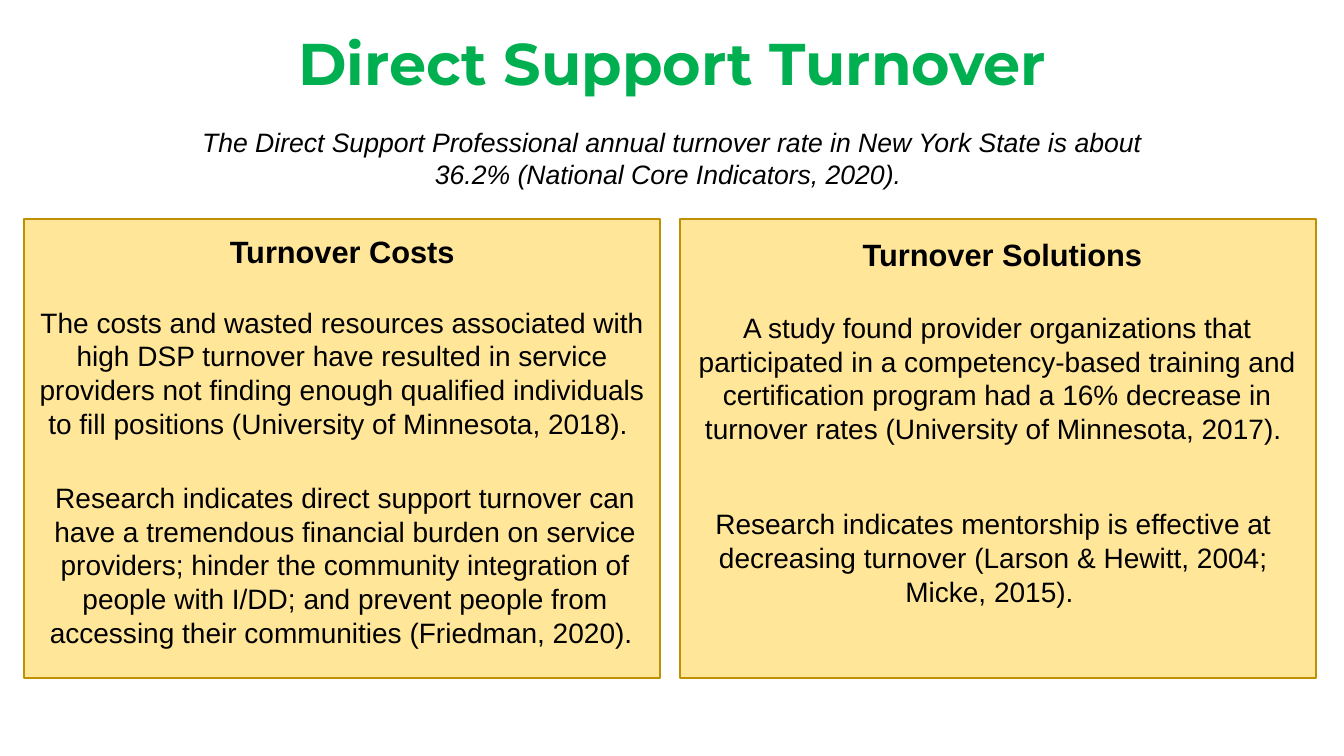
from pptx import Presentation
from pptx.dml.color import RGBColor
from pptx.enum.shapes import MSO_SHAPE as Shape
from pptx.enum.text import MSO_ANCHOR as Anchor, PP_ALIGN as Align
from pptx.util import Pt

COLORS = {"title": "00B050", "text": "000000", "panel": "FFE699", "border": "BF9000"}

# Every box is (left, top, width, height) in points.
TITLE = ("Direct Support Turnover", (66.24, 20.88, 828, 65.52))
SUBTITLE = (
    "The Direct Support Professional annual turnover rate in New York State is about "
    "36.2% (National Core Indicators, 2020). ",
    (135.36, 86.4, 689.04, 134.64),
)
PANELS = [(17.28, 156.24, 454.32, 328.32), (486, 156.24, 454.32, 328.32)]
HEADINGS = [
    ("Turnover Costs", (56.88, 162.72, 375.12, 33.84)),
    ("Turnover Solutions", (528.48, 164.88, 375.12, 33.84)),
]
FINDINGS = [
    ("The costs and wasted resources associated with high DSP turnover have resulted "
     "in service providers not finding enough qualified individuals to fill positions "
     "(University of Minnesota, 2018). ",
     (13.68, 214.56, 461.52, 104.4)),
    ("Research indicates direct support turnover can have a tremendous financial burden "
     "on service providers; hinder the community integration of people with I/DD; and "
     "prevent people from accessing their communities (Friedman, 2020). ",
     (15.84, 339.84, 461.52, 128.16)),
    ("A study found provider organizations that participated in a competency-based "
     "training and certification program had a 16% decrease in turnover rates "
     "(University of Minnesota, 2017). ",
     (472.32, 218.16, 480.24, 104.4)),
    ("Research indicates mentorship is effective at decreasing turnover "
     "(Larson & Hewitt, 2004; Micke, 2015). ",
     (478.8, 358.56, 461.52, 79.92)),
]


def color(name):
    return RGBColor.from_string(COLORS[name])


def in_points(box):
    return [Pt(length) for length in box]


def add_panel(slide, box):
    panel = slide.shapes.add_shape(Shape.RECTANGLE, *in_points(box))
    panel.shadow.inherit = False
    panel.fill.solid()
    panel.fill.fore_color.rgb = color("panel")
    panel.line.color.rgb = color("border")
    panel.line.width = Pt(1.5)


def add_text(slide, text, box, size, font_name="Arial", color_name="text",
             bold=False, italic=False, line_spacing=None):
    frame = slide.shapes.add_textbox(*in_points(box)).text_frame
    frame.word_wrap = True
    frame.vertical_anchor = Anchor.TOP
    paragraph = frame.paragraphs[0]
    paragraph.alignment = Align.CENTER
    paragraph.line_spacing = line_spacing
    run = paragraph.add_run()
    run.text = text
    run.font.name = font_name
    run.font.size = Pt(size)
    run.font.bold = bold
    run.font.italic = italic
    run.font.color.rgb = color(color_name)


def main():
    presentation = Presentation()
    presentation.slide_width = Pt(960)
    presentation.slide_height = Pt(540)
    slide = presentation.slides.add_slide(presentation.slide_layouts[6])

    for box in PANELS:
        add_panel(slide, box)
    add_text(slide, *SUBTITLE, size=19, italic=True)
    add_text(slide, *TITLE, size=42, font_name="Montserrat", color_name="title",
             bold=True, line_spacing=0.9)
    for heading, box in HEADINGS:
        add_text(slide, heading, box, size=22, bold=True)
    for finding, box in FINDINGS:
        add_text(slide, finding, box, size=20)

    presentation.save("out.pptx")


if __name__ == "__main__":
    main()
